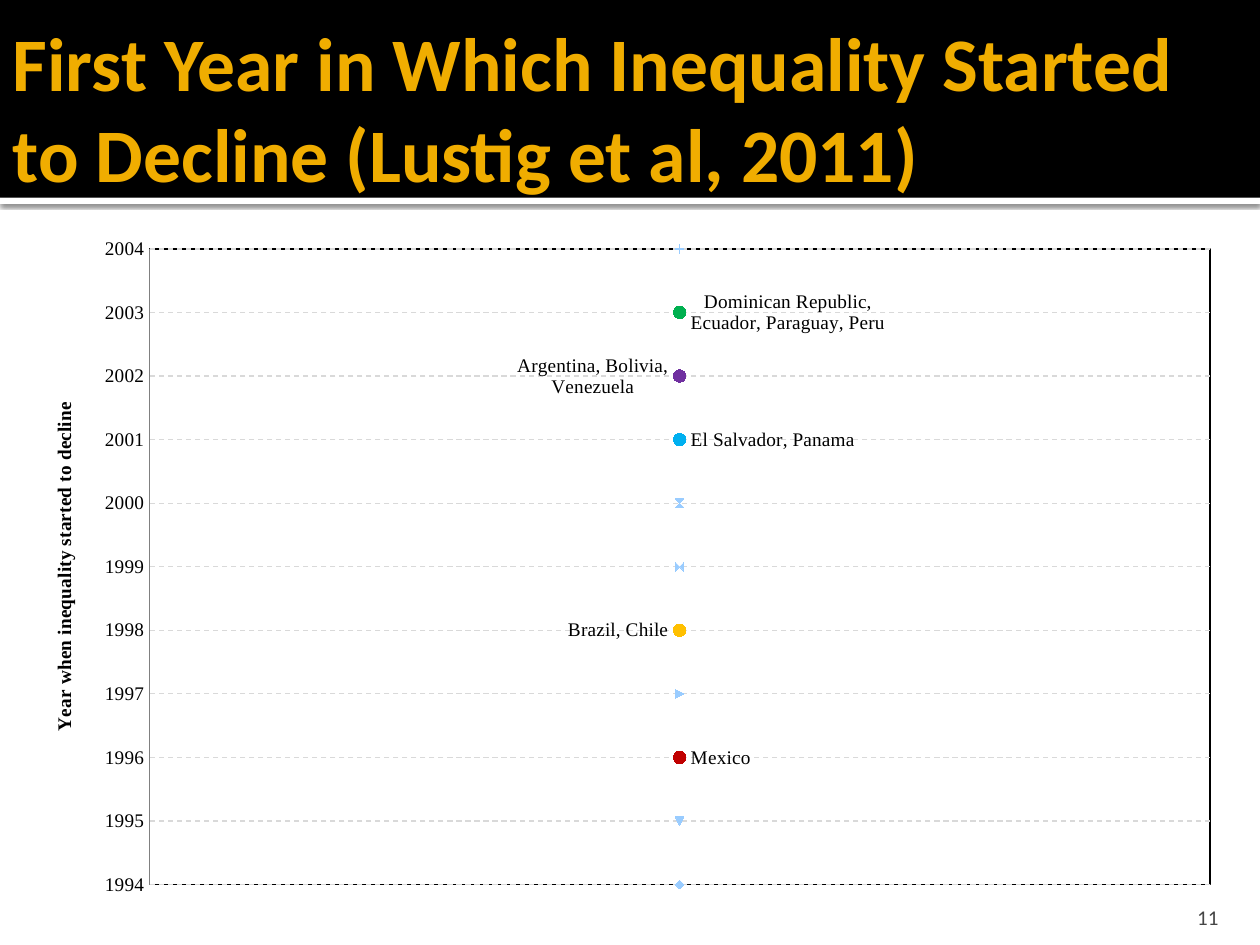
from lxml import etree
from pptx import Presentation, util as u
from pptx.chart.data import XyChartData
from pptx.chart.datalabel import DataLabels
from pptx.dml.color import RGBColor
from pptx.enum import chart as ch, dml, shapes, text
from pptx.oxml import parse_xml
from pptx.oxml.ns import nsdecls, qn

Pt = u.Pt
COLORS = {
    "black": "000000", "white": "FFFFFF", "title": "F0AD00", "number": "454545",
    "grid": "D9D9D9", "axis": "808080", "quiet": "99CCFF",
    "red": "C00000", "amber": "FFC000", "blue": "00B0F0",
    "purple": "7030A0", "green": "00B050",
}
FIRST_YEAR, LAST_YEAR = 1994, 2004
LEFT, RIGHT = ch.XL_LABEL_POSITION.LEFT, ch.XL_LABEL_POSITION.RIGHT
# year: (countries, marker colour, label side)
DECLINES = {
    1996: ("Mexico", "red", RIGHT),
    1998: ("Brazil, Chile", "amber", LEFT),
    2001: ("El Salvador, Panama", "blue", RIGHT),
    2002: ("Argentina, Bolivia, Venezuela", "purple", LEFT),
    2003: ("Dominican Republic, Ecuador, Paraguay, Peru", "green", RIGHT),
}


def rgb(name):
    return RGBColor.from_string(COLORS[name])


def set_attrs(obj, **values):
    for name, value in values.items():
        setattr(obj, name, value)


def add_band(slide, top, height, color):
    sp = slide.shapes.add_shape(shapes.MSO_SHAPE.RECTANGLE, 0, Pt(top), Pt(720), Pt(height))
    sp.shadow.inherit = False
    sp.fill.solid()
    sp.fill.fore_color.rgb = rgb(color)
    sp.line.fill.background()
    return sp


def add_shadow(sp):
    effects = sp._element.spPr.find(qn("a:effectLst"))
    effects.append(parse_xml(
        f'<a:outerShdw {nsdecls("a")} blurRad="{Pt(2.5)}" dist="{Pt(0.8)}" dir="5400000">'
        f'<a:srgbClr val="{COLORS["black"]}"><a:alpha val="60000"/></a:srgbClr></a:outerShdw>'))


def write_text(sp, words, size, color, align, frame, bold=False):
    tf = sp.text_frame
    set_attrs(tf, word_wrap=True, auto_size=text.MSO_AUTO_SIZE.NONE, **frame)
    p = tf.paragraphs[0]
    p.alignment = align
    r = p.add_run()
    r.text = words
    set_attrs(r.font, name="Calibri", size=Pt(size), bold=bold)
    r.font.color.rgb = rgb(color)


def add_title(slide, words):
    sp = slide.shapes.title
    set_attrs(sp, left=0, top=0, width=Pt(720), height=Pt(122.4))
    frame = dict(margin_left=Pt(7.2), margin_right=Pt(3.6),
                 vertical_anchor=text.MSO_ANCHOR.MIDDLE)
    write_text(sp, words, 43.2, "title", text.PP_ALIGN.LEFT, frame, bold=True)
    slide.shapes._spTree.append(sp._element)  # in front of the bands


def add_slide_number(slide, number):
    sp = slide.shapes.add_textbox(Pt(645.8), Pt(509.8), Pt(57.6), Pt(21.6))
    frame = dict(margin_bottom=0, vertical_anchor=text.MSO_ANCHOR.BOTTOM)
    write_text(sp, number, 12, "number", text.PP_ALIGN.RIGHT, frame)


def area_format(line):
    return parse_xml(
        f'<c:spPr {nsdecls("c", "a")}>'
        f'<a:solidFill><a:srgbClr val="{COLORS["white"]}"/></a:solidFill>'
        f'<a:ln w="{Pt(0.75)}"><a:solidFill><a:srgbClr val="{COLORS[line]}"/>'
        '</a:solidFill></a:ln></c:spPr>')


def format_areas(chart):
    space = chart._chartSpace
    space.chart.addnext(area_format("white"))
    plot = space.chart.plotArea
    plot.append(area_format("black"))
    # Inner plot rectangle, as shares of the chart
    for old in plot.findall(qn("c:layout")):
        plot.remove(old)
    layout = etree.Element(qn("c:layout"))
    manual = etree.SubElement(layout, qn("c:manualLayout"))
    for tag, value in dict(layoutTarget="inner", xMode="edge", yMode="edge",
                           x=0.102, y=0.035, w=0.877, h=0.931).items():
        etree.SubElement(manual, qn(f"c:{tag}")).set("val", str(value))
    plot.insert(0, layout)


def format_axes(chart):
    none = ch.XL_TICK_MARK.NONE
    set_attrs(chart.category_axis, minimum_scale=0, maximum_scale=2, major_unit=1,
              has_major_gridlines=False, visible=False)
    axis = chart.value_axis
    set_attrs(axis, minimum_scale=FIRST_YEAR, maximum_scale=LAST_YEAR, major_unit=1,
              major_tick_mark=none, minor_tick_mark=none, has_major_gridlines=True)
    set_attrs(axis.tick_labels, number_format="0", number_format_is_linked=False)
    axis.format.line.color.rgb = rgb("axis")
    grid = axis.major_gridlines.format.line
    grid.color.rgb = rgb("grid")
    set_attrs(grid, width=Pt(0.75), dash_style=dml.MSO_LINE.DASH)
    # Upright axis title
    tf = axis.axis_title.text_frame
    tf.text = "Year when inequality started to decline"
    tf._txBody.bodyPr.set("rot", "-5400000")
    font = tf.paragraphs[0].runs[0].font
    set_attrs(font, name="Times New Roman", size=Pt(11), bold=True)
    font.color.rgb = rgb("black")


def format_marker(series, color, size, style=None):
    marker = series.marker
    marker.size = size
    if style:
        marker.style = style
    marker.format.fill.solid()
    marker.format.fill.fore_color.rgb = rgb(color)
    marker.format.line.color.rgb = rgb(color)


def add_series_label(series, side):
    labels = DataLabels(series._element.get_or_add_dLbls())
    set_attrs(labels, show_value=False, show_series_name=True, position=side)
    set_attrs(labels.font, name="Times New Roman", size=Pt(11))


def add_year_chart(slide):
    years = range(FIRST_YEAR, LAST_YEAR + 1)
    data = XyChartData()
    for i, year in enumerate(years, 1):
        name = DECLINES[year][0] if year in DECLINES else f"Series {i}"
        data.add_series(name).add_data_point(1, year)
    chart = slide.shapes.add_chart(ch.XL_CHART_TYPE.XY_SCATTER, Pt(14.4), Pt(128.2),
                                   Pt(692), Pt(391), data).chart
    set_attrs(chart, has_legend=False, has_title=False)
    set_attrs(chart.font, name="Times New Roman", size=Pt(11))
    chart.font.color.rgb = rgb("black")
    format_areas(chart)
    format_axes(chart)
    chart.plots[0].vary_by_categories = False
    for year, series in zip(years, chart.plots[0].series):
        series.format.line.fill.background()
        if year in DECLINES:
            _, color, side = DECLINES[year]
            format_marker(series, color, 7, ch.XL_MARKER_STYLE.CIRCLE)
            add_series_label(series, side)
        else:
            format_marker(series, "quiet", 5)


def main():
    prs = Presentation()
    set_attrs(prs, slide_width=Pt(720), slide_height=Pt(540))
    slide = prs.slides.add_slide(prs.slide_layouts[5])
    # Header
    add_shadow(add_band(slide, 113, 3.6, "white"))
    add_band(slide, 0, 113, "black")
    add_title(slide, "First Year in Which Inequality Started to Decline (Lustig et al, 2011)")
    # Body
    add_slide_number(slide, "11")
    add_year_chart(slide)
    prs.save("out.pptx")


if __name__ == "__main__":
    main()
